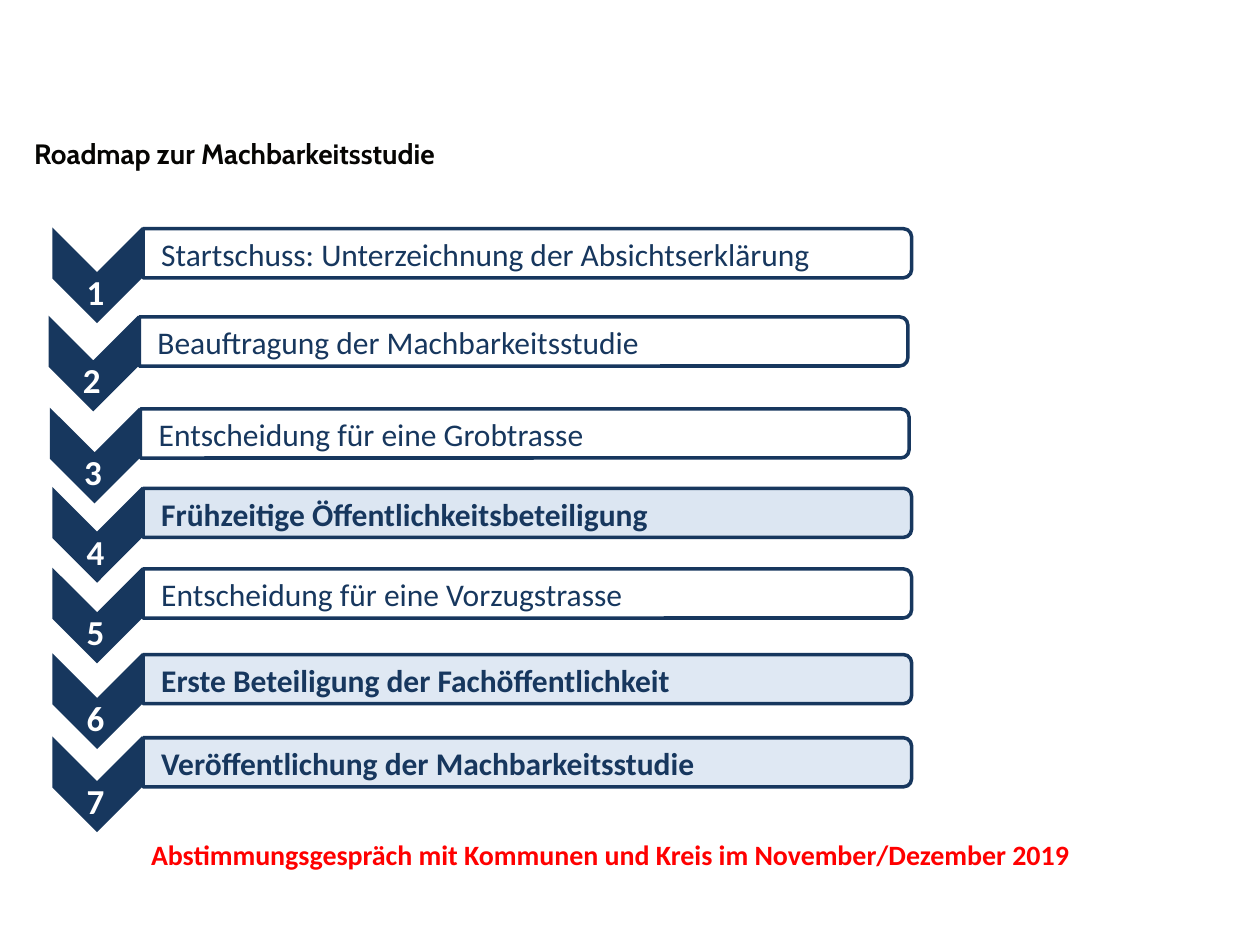
from lxml.etree import SubElement
from pptx import Presentation
from pptx.dml.color import RGBColor
from pptx.enum.shapes import MSO_SHAPE as Preset
from pptx.enum.text import MSO_ANCHOR as Anchor, MSO_AUTO_SIZE as AutoSize, PP_ALIGN as Align
from pptx.oxml.ns import qn
from pptx.util import Inches, Pt

NAVY, PALE, WHITE, RED, BLACK = "17375E", "DCE6F2", "FFFFFF", "FF0000", "060503"
STEPS = [
    (0.39, 1.83, "Startschuss: Unterzeichnung der Absichtserklärung", WHITE, 90, False),
    (0.36, 2.53, "Beauftragung der Machbarkeitsstudie", WHITE, 90, False),
    (0.37, 3.26, "Entscheidung für eine Grobtrasse", WHITE, 90, False),
    (0.39, 3.89, "Frühzeitige Öffentlichkeitsbeteiligung", PALE, 100, True),
    (0.39, 4.53, "Entscheidung für eine Vorzugstrasse", WHITE, 90, False),
    (0.39, 5.21, "Erste Beteiligung der Fachöffentlichkeit", PALE, 90, True),
    (0.39, 5.87, "Veröffentlichung der Machbarkeitsstudie", PALE, 90, True),
]


def colour(code):
    """Turn a hex string into a colour."""
    return RGBColor.from_string(code)


def inches(*lengths):
    """Convert several lengths at once."""
    return [Inches(length) for length in lengths]


def write(holder, text, tint, insets=(0.1, 0.05, 0.1, 0.05), spacing=None, frame=None, **font):
    """Fill a text holder with one formatted paragraph."""
    body = holder.text_frame
    sides = ("margin_left", "margin_top", "margin_right", "margin_bottom")
    settings = {"word_wrap": True, "auto_size": AutoSize.NONE, "vertical_anchor": Anchor.TOP,
                **dict(zip(sides, inches(*insets))), **(frame or {})}
    for key, value in settings.items():
        setattr(body, key, value)
    line = body.paragraphs[0]
    line.text, line.alignment = text, Align.LEFT
    if spacing:
        line.line_spacing = spacing
    for key, value in {"name": "Calibri", "bold": True, **font}.items():
        setattr(line.runs[0].font, key, value)
    line.runs[0].font.color.rgb = colour(tint)


def add_turned(shapes, preset, box, fill, opacity=100, outline=None):
    """Add a filled preset shape turned a quarter clockwise."""
    shape = shapes.add_shape(preset, *inches(*box))
    shape.rotation = 90
    shape.shadow.inherit = False
    shape.fill.solid()
    shape.fill.fore_color.rgb = colour(fill)
    if opacity < 100:
        tone = shape.fill._xPr.find(qn("a:solidFill"))[0]
        SubElement(tone, qn("a:alpha"), val=str(opacity * 1000))
    if outline:
        shape.line.color.rgb = colour(outline)
        shape.line.width = Pt(2)
    else:
        shape.line.fill.background()


def add_step(slide, left, top, number, label, fill, opacity, bold):
    """Place one numbered roadmap step with its chevron and bar."""
    parts = slide.shapes.add_group_shape().shapes
    add_turned(parts, Preset.CHEVRON, (left, top, 0.76, 0.71), NAVY)
    digit = parts.add_textbox(*inches(left + 0.2, top + 0.27, 0.34, 0.44))
    write(digit, str(number), WHITE, size=Pt(20),
          frame={"word_wrap": False, "auto_size": AutoSize.SHAPE_TO_FIT_TEXT})
    add_turned(parts, Preset.ROUND_2_SAME_RECTANGLE, (left + 3.6, top - 2.87, 0.39, 6.1),
               fill, opacity, NAVY)
    caption = parts.add_textbox(*inches(left + 0.73, top - 0.04, 6.3, 0.49))
    write(caption, label, NAVY, (0.16, 0.01, 0.01, 0.01), 0.9,
          {"vertical_anchor": Anchor.MIDDLE}, size=Pt(18), bold=bold)


def add_heading(slide, box, text):
    """Move and format the title placeholder."""
    title = slide.shapes.title
    title.left, title.top, title.width, title.height = inches(*box)
    write(title, text, BLACK, (0, 0, 0, 0), Pt(26), name="Cabin", size=Pt(16))


def add_closing(slide, box, text):
    """Place the red note below the roadmap."""
    note = slide.shapes.add_textbox(*inches(*box))
    write(note, text, RED, size=Pt(16), frame={"auto_size": AutoSize.SHAPE_TO_FIT_TEXT})


def main():
    """Build and save the roadmap slide."""
    deck = Presentation()
    deck.slide_width, deck.slide_height = inches(10, 7.5)
    slide = deck.slides.add_slide(deck.slide_layouts[5])
    add_heading(slide, (0.27, 0.99, 9.53, 0.37), "Roadmap zur Machbarkeitsstudie")
    for number, (left, top, *content) in enumerate(STEPS, 1):
        add_step(slide, left, top, number, *content)
    add_closing(slide, (1.1, 6.6, 8.08, 0.37),
                "Abstimmungsgespräch mit Kommunen und Kreis im November/Dezember 2019")
    deck.save("out.pptx")


if __name__ == "__main__":
    main()
